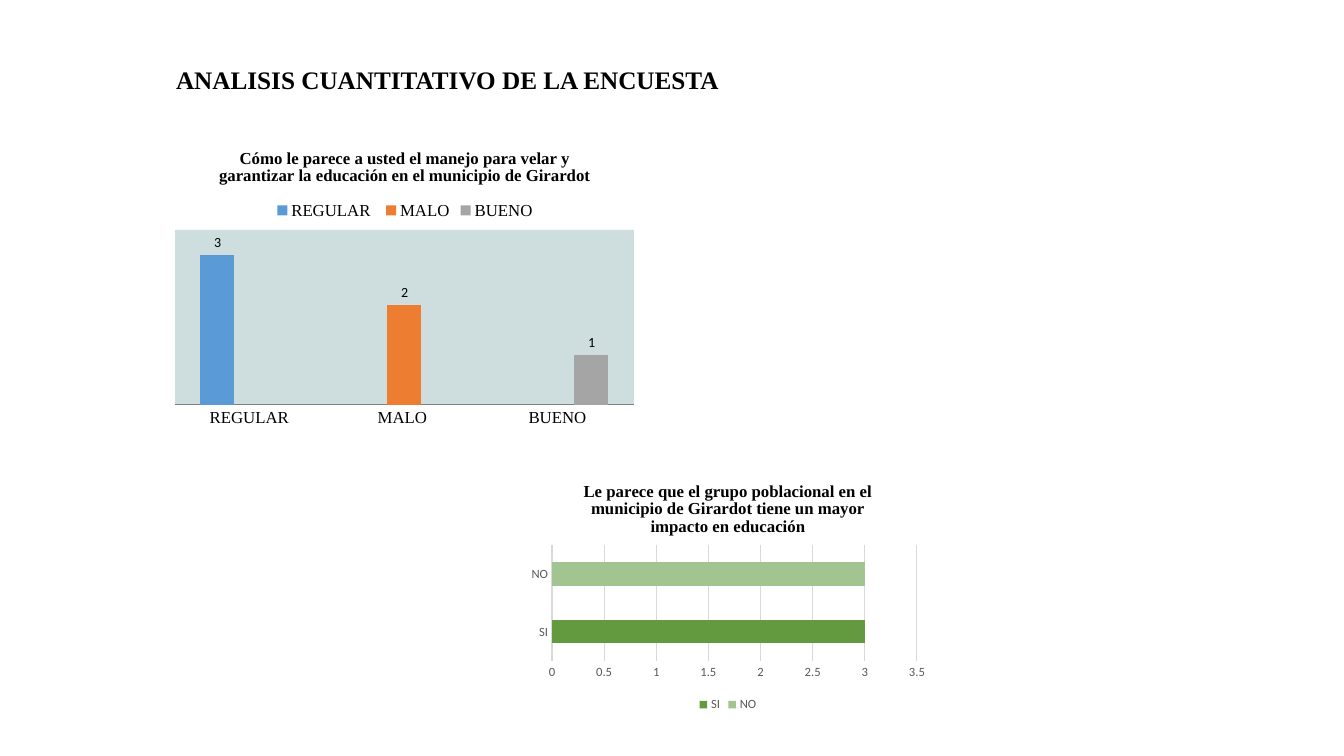
"""Build the survey analysis slide with its two bar charts."""
from dataclasses import dataclass
from typing import Any, Optional

from lxml.etree import SubElement
from pptx import Presentation
from pptx.chart.data import CategoryChartData
from pptx.dml.color import RGBColor
from pptx.enum.chart import XL_CHART_TYPE, XL_LABEL_POSITION, XL_LEGEND_POSITION, XL_TICK_MARK
from pptx.enum.text import MSO_ANCHOR, MSO_AUTO_SIZE, PP_ALIGN
from pptx.oxml import parse_xml
from pptx.oxml.ns import nsdecls, qn
from pptx.util import Pt

EMU_PER_PX = 914400 / 100.8
SERIF, SANS = "Times New Roman", "Calibri"
COLORS = {
    "black": "000000", "grey": "595959", "grid": "D9D9D9", "axis": "808080",
    "panel": "CEDEDE", "blue": "5B9BD5", "orange": "ED7D31", "silver": "A5A5A5",
    "green": "639A3F", "light_green": "A1C490",
}


@dataclass
class Box:
    x: int
    y: int
    w: int
    h: int


@dataclass
class Bars:
    name: str
    value: int
    color: str


@dataclass
class SurveyChart:
    kind: XL_CHART_TYPE
    box: Box
    plot: Box
    title: str
    categories: list[str]
    bars: list[Bars]
    legend: XL_LEGEND_POSITION
    overlap: int
    text: dict[str, Any]
    axis_color: str
    panel: Optional[str] = None
    value_axis: bool = False


CHARTS = [
    SurveyChart(
        XL_CHART_TYPE.COLUMN_CLUSTERED, Box(166, 133, 478, 300), Box(175, 230, 459, 175),
        "Cómo le parece a usted el manejo para velar y garantizar la educación "
        "en el municipio de Girardot",
        ["REGULAR ", "MALO ", "BUENO"],
        [Bars("REGULAR ", 3, "blue"), Bars("MALO", 2, "orange"), Bars("BUENO", 1, "silver")],
        XL_LEGEND_POSITION.TOP, 0,
        {"name": SERIF, "size": Pt(12), "color": "black"}, "axis", panel="panel"),
    SurveyChart(
        XL_CHART_TYPE.BAR_STACKED, Box(523, 467, 410, 249), Box(552, 545, 365, 116),
        "Le parece que el grupo poblacional en el municipio de Girardot tiene un mayor "
        "impacto en educación",
        ["SI", "NO"],
        [Bars("SI", 3, "green"), Bars("NO", 3, "light_green")],
        XL_LEGEND_POSITION.BOTTOM, 100,
        {"name": SANS, "size": Pt(9), "color": "grey"}, "grid", value_axis=True),
]


def px(n: int) -> int:
    return round(n * EMU_PER_PX)


def rgb(name: str) -> RGBColor:
    return RGBColor.from_string(COLORS[name])


def format_font(font: Any, values: dict[str, Any]) -> None:
    for key, value in values.items():
        if key == "color":
            font.color.rgb = rgb(value)
        else:
            setattr(font, key, value)


def format_line(line: Any, color: str) -> None:
    line.color.rgb = rgb(color)
    line.width = Pt(0.75)


def place_plot(chart: Any, box: Box, plot: Box, panel: Optional[str]) -> None:
    area = chart.element.find(".//" + qn("c:plotArea"))
    for old in area.findall(qn("c:layout")):
        area.remove(old)
    layout = parse_xml(f"<c:layout {nsdecls('c')}/>")
    manual = SubElement(layout, qn("c:manualLayout"))
    settings = {
        "layoutTarget": "inner", "xMode": "edge", "yMode": "edge",
        "x": (plot.x - box.x) / box.w, "y": (plot.y - box.y) / box.h,
        "w": plot.w / box.w, "h": plot.h / box.h,
    }
    for tag, value in settings.items():
        SubElement(manual, qn(f"c:{tag}")).set("val", str(value))
    area.insert(0, layout)
    if panel:
        area.append(parse_xml(
            f'<c:spPr {nsdecls("c", "a")}><a:solidFill><a:srgbClr val="{COLORS[panel]}"/>'
            "</a:solidFill></c:spPr>"))


def format_axes(chart: Any, spec: SurveyChart) -> None:
    cat, val = chart.category_axis, chart.value_axis
    for axis in (cat, val):
        axis.major_tick_mark = axis.minor_tick_mark = XL_TICK_MARK.NONE
        format_font(axis.tick_labels.font, spec.text)
    cat.has_major_gridlines = False
    format_line(cat.format.line, spec.axis_color)
    limits = {"minimum_scale": 0, "maximum_scale": 3.5, "major_unit": 0.5,
              "visible": spec.value_axis, "has_major_gridlines": spec.value_axis}
    for key, value in limits.items():
        setattr(val, key, value)
    if spec.value_axis:
        val.tick_labels.number_format = "General"
        val.tick_labels.number_format_is_linked = False
        val.format.line.fill.background()
        format_line(val.major_gridlines.format.line, "grid")


def add_survey_chart(s: Any, spec: SurveyChart) -> None:
    data = CategoryChartData()
    data.categories = spec.categories
    for i, bars in enumerate(spec.bars):
        data.add_series(bars.name, [bars.value if j == i else None
                                    for j in range(len(spec.categories))])
    b = spec.box
    chart = s.shapes.add_chart(spec.kind, px(b.x), px(b.y), px(b.w), px(b.h), data).chart
    format_font(chart.font, {"name": SANS, "size": Pt(10), "color": "black"})

    chart.has_title = True
    chart.chart_title.include_in_layout = False
    p = chart.chart_title.text_frame.paragraphs[0]
    r = p.add_run()
    r.text = spec.title
    format_font(r.font, {"name": SERIF, "size": Pt(12), "bold": True, "color": "black"})

    chart.has_legend = True
    chart.legend.position = spec.legend
    chart.legend.include_in_layout = False
    format_font(chart.legend.font, spec.text)

    plot = chart.plots[0]
    for key, value in {"gap_width": 150, "overlap": spec.overlap,
                       "vary_by_categories": False}.items():
        setattr(plot, key, value)
    for series, bars in zip(plot.series, spec.bars):
        series.format.fill.solid()
        series.format.fill.fore_color.rgb = rgb(bars.color)
        if not spec.value_axis:
            series.data_labels.show_value = True
            series.data_labels.position = XL_LABEL_POSITION.OUTSIDE_END
    format_axes(chart, spec)
    place_plot(chart, b, spec.plot, spec.panel)


def add_title(s: Any, text: str, box: Box) -> None:
    sp = s.shapes.title
    for key, value in {"left": box.x, "top": box.y, "width": box.w, "height": box.h}.items():
        setattr(sp, key, px(value))
    tf = sp.text_frame
    for key, value in {"word_wrap": True, "vertical_anchor": MSO_ANCHOR.TOP,
                       "auto_size": MSO_AUTO_SIZE.SHAPE_TO_FIT_TEXT}.items():
        setattr(tf, key, value)
    p = tf.paragraphs[0]
    for key, value in {"alignment": PP_ALIGN.LEFT, "line_spacing": 2.0,
                       "space_before": Pt(0), "space_after": Pt(8)}.items():
        setattr(p, key, value)
    r = p.add_run()
    r.text = text
    format_font(r.font, {"name": SERIF, "size": Pt(18), "bold": True, "color": "black"})


def main() -> None:
    prs = Presentation()
    prs.slide_width, prs.slide_height = px(1344), px(756)
    s = prs.slides.add_slide(prs.slide_layouts[5])
    add_title(s, "ANALISIS CUANTITATIVO DE LA ENCUESTA", Box(166, 29, 790, 72))
    for spec in CHARTS:
        add_survey_chart(s, spec)
    prs.save("out.pptx")


if __name__ == "__main__":
    main()
